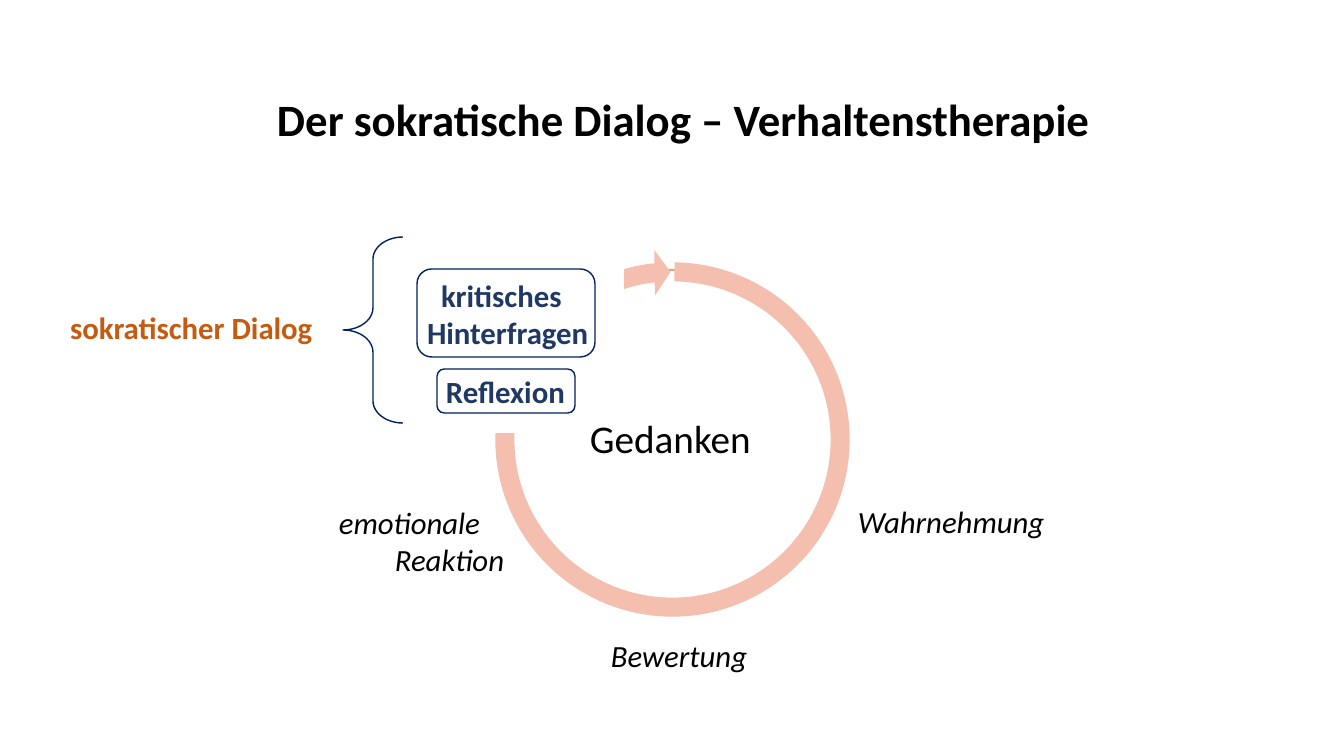
from dataclasses import dataclass

from pptx import Presentation
from pptx.dml.color import RGBColor
from pptx.enum import shapes, text
from pptx.util import Pt

SIZE = 1344, 756
SCALE = 12192000 / SIZE[0]
INSET = 10, 5


@dataclass(frozen=True)
class Theme:
    font: str = "Calibri"
    title: int = 32
    core: int = 28
    label: int = 22
    black: str = "000000"
    white: str = "FFFFFF"
    navy: str = "203864"
    edge: str = "002060"
    rust: str = "C55A11"
    rim: str = "D7712C"
    ring: str = "F4BFAE"


T = Theme()
ITALIC = dict(size=T.label, color=T.black, italic=True)
CORE = dict(size=T.core, color=T.black)
RUST = dict(size=T.label, color=T.rust, bold=True)
NAVY = dict(size=T.label, color=T.navy, bold=True)

# Each line of text is (wording, left indent in px)
TITLE = [("Der sokratische Dialog – Verhaltenstherapie", 0)]
LABELS = [
    ((329, 498, 217, 85), [("emotionale", 0), ("Reaktion", 56)], ITALIC),
    ((848, 498, 210, 47), [("Wahrnehmung", 0)], ITALIC),
    ((601, 632, 159, 47), [("Bewertung", 0)], ITALIC),
    ((580, 409, 181, 57), [("Gedanken", 0)], CORE),
    ((436, 368, 140, 47), [("Reflexion", 0)], NAVY),
    ((417, 271, 188, 85), [("kritisches", 14), ("Hinterfragen", 0)], NAVY),
    ((60, 304, 266, 47), [("sokratischer Dialog", 0)], RUST),
]
FRAMES = [(437, 369, 138, 44), (417, 269, 178, 88)]
CIRCLE = 501, 270, 340, 340
ARROW = 482, 249, 381, 381
GAP = 407, 253, 217, 180
BRACE = 343, 237, 60, 186


def emu(px):
    return round(px * SCALE)


def rgb(code):
    return RGBColor.from_string(code)


def turn(deg):
    """Degrees as a shape adjustment value."""
    return deg * 0.6


def write(shape, lines, size, color, bold=False, italic=False):
    frame = shape.text_frame
    frame.word_wrap = True
    frame.auto_size = text.MSO_AUTO_SIZE.NONE
    frame.vertical_anchor = text.MSO_ANCHOR.MIDDLE
    frame.margin_left = frame.margin_right = emu(INSET[0])
    frame.margin_top = frame.margin_bottom = emu(INSET[1])
    frame.text = "\n".join(line for line, _ in lines)
    for para, (_, indent) in zip(frame.paragraphs, lines):
        para.alignment = text.PP_ALIGN.LEFT
        if indent:
            para._p.get_or_add_pPr().set("marL", str(emu(indent)))
        font = para.font
        font.name, font.size = T.font, Pt(size)
        font.bold, font.italic = bold, italic
        font.color.rgb = rgb(color)


def draw(slide, kind, box, fill=None, line=None, adjust=()):
    shape = slide.shapes.add_shape(kind, *map(emu, box))
    shape.shadow.inherit = False
    if fill:
        shape.fill.solid()
        shape.fill.fore_color.rgb = rgb(fill)
    else:
        shape.fill.background()
    if line:
        shape.line.color.rgb = rgb(line)
        shape.line.width = Pt(1)
    else:
        shape.line.fill.background()
    for i, value in enumerate(adjust):
        shape.adjustments[i] = value


def main():
    deck = Presentation()
    deck.slide_width, deck.slide_height = map(emu, SIZE)
    slide = deck.slides.add_slide(deck.slide_layouts[5])
    kind = shapes.MSO_SHAPE

    title = slide.shapes.title
    title.left, title.top, title.width, title.height = map(emu, (267, 87, 853, 64))
    write(title, TITLE, T.title, T.black, bold=True)

    draw(slide, kind.OVAL, CIRCLE, T.white, T.rim)
    draw(slide, kind.CIRCULAR_ARROW, ARROW, T.ring,
         adjust=(0.05, turn(5.46), turn(263.87), turn(270.67), 0.06))
    draw(slide, kind.RECTANGLE, GAP, T.white)

    for box, lines, style in LABELS:
        write(slide.shapes.add_textbox(*map(emu, box)), lines, **style)
    for box in FRAMES:
        draw(slide, kind.ROUNDED_RECTANGLE, box, line=T.edge)
    draw(slide, kind.LEFT_BRACE, BRACE, line=T.edge, adjust=(0.37, 0.5))

    deck.save("out.pptx")


if __name__ == "__main__":
    main()
